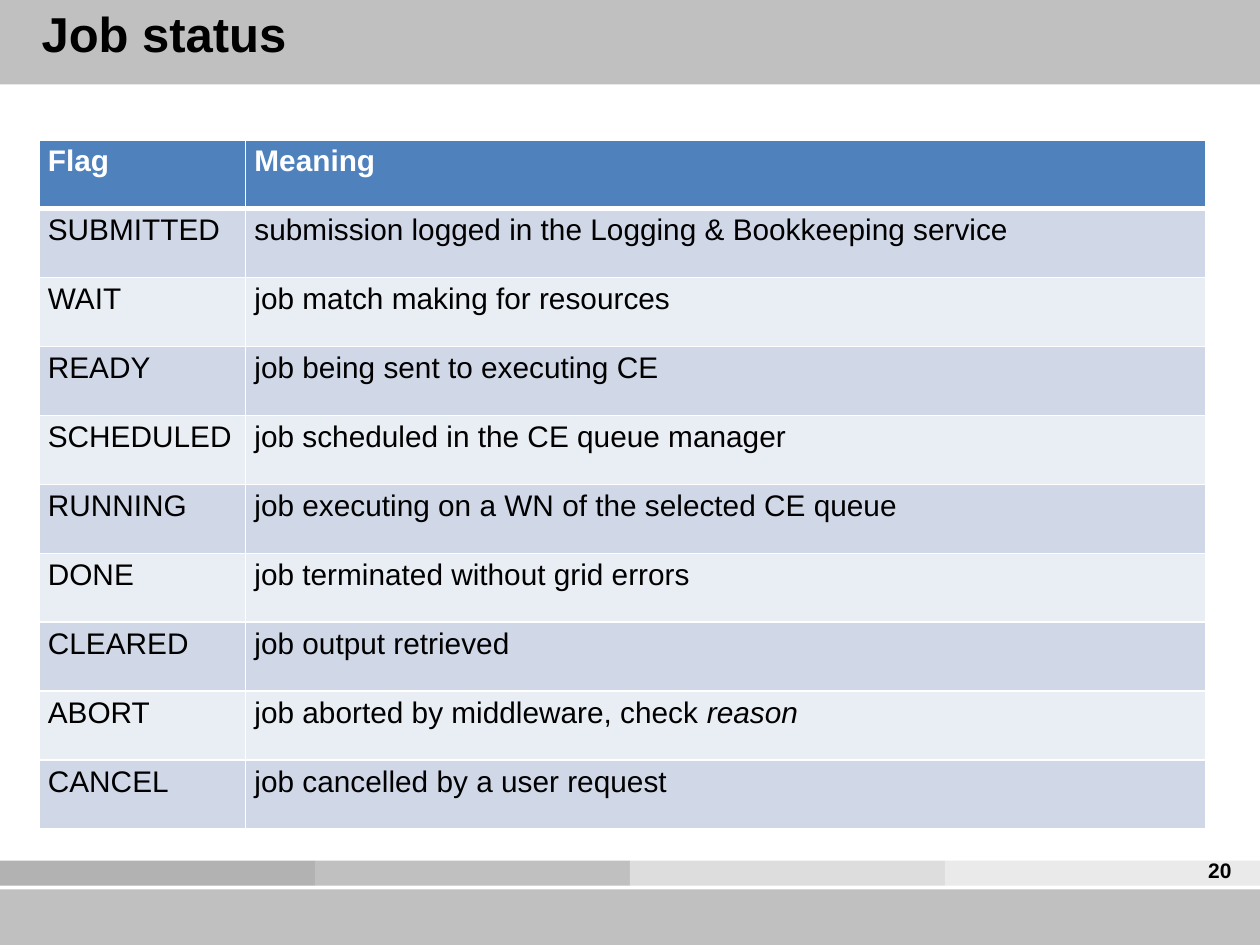
from lxml import etree
from pptx import Presentation, util as u
from pptx.dml.color import RGBColor
from pptx.enum import shapes, text
from pptx.oxml.ns import qn

COLORS = {
    "band": "C0C0C0", "white": "FFFFFF", "black": "000000",
    "header": "4F81BD", "odd": "D0D8E8", "even": "E9EDF4",
}
STRIPES = ["B2B2B2", "C0C0C0", "DDDDDD", "EAEAEA"]
STATUSES = [
    ("Flag", "Meaning"),
    ("SUBMITTED", "submission logged in the Logging & Bookkeeping service"),
    ("WAIT", "job match making for resources"),
    ("READY", "job being sent to executing CE"),
    ("SCHEDULED", "job scheduled in the CE queue manager"),
    ("RUNNING", "job executing on a WN of the selected CE queue"),
    ("DONE", "job terminated without grid errors"),
    ("CLEARED", "job output retrieved"),
    ("ABORT", "job aborted by middleware, check "),
    ("CANCEL", "job cancelled by a user request"),
]


def add_bar(left, top, width, height, color):
    bar = slide.shapes.add_shape(
        shapes.MSO_SHAPE.RECTANGLE, *map(u.Inches, (left, top, width, height)))
    bar.shadow.inherit = False
    bar.fill.solid()
    bar.fill.fore_color.rgb = RGBColor.from_string(color)
    bar.line.fill.background()


def format_runs(paragraph, size, color, bold):
    for run in paragraph.runs:
        run.font.name = "Arial"
        run.font.size = u.Pt(size)
        run.font.bold = bold
        run.font.color.rgb = RGBColor.from_string(color)


prs = Presentation()
prs.slide_width, prs.slide_height = u.Inches(10), u.Inches(7.5)
slide = prs.slides.add_slide(prs.slide_layouts[6])

# Header band, footer band and the four footer stripes
add_bar(0, 0, 10, 0.67, COLORS["band"])
add_bar(0, 7.06, 10, 0.44, COLORS["band"])
for i, color in enumerate(STRIPES):
    add_bar(2.5 * i, 6.83, 2.5, 0.2, color)

# Job status table
status_table = slide.shapes.add_table(
    len(STATUSES), 2, u.Inches(0.31), u.Inches(1.11), u.Inches(9.26), u.Inches(5.47)).table
status_table.columns[0].width = u.Inches(1.64)
status_table.columns[1].width = u.Inches(7.62)

for r, status in enumerate(STATUSES):
    fill = COLORS["header"] if r == 0 else COLORS["odd" if r % 2 else "even"]
    ink = COLORS["white" if r == 0 else "black"]
    for c, label in enumerate(status):
        cell = status_table.cell(r, c)
        cell.margin_left = cell.margin_right = u.Inches(0.07)
        cell.margin_top = cell.margin_bottom = u.Inches(0.04)
        entry = cell.text_frame.paragraphs[0]
        entry.text = label
        if status[0] == "ABORT" and c == 1:
            reason = entry.add_run()
            reason.text = "reason"
            reason.font.italic = True
        entry.alignment = text.PP_ALIGN.LEFT
        format_runs(entry, 17, ink, r == 0)

        # White cell borders, thicker under the header row
        tc_pr = cell._tc.get_or_add_tcPr()
        for side in "LRTB":
            thick = (r, side) in ((0, "B"), (1, "T"))
            border = etree.SubElement(
                tc_pr, qn(f"a:ln{side}"), w=str(u.Pt(3 if thick else 1)))
            border_fill = etree.SubElement(border, qn("a:solidFill"))
            etree.SubElement(border_fill, qn("a:srgbClr"), val=COLORS["white"])
        cell.fill.solid()
        cell.fill.fore_color.rgb = RGBColor.from_string(fill)

# Page number
page_number = slide.shapes.add_textbox(
    u.Inches(9.49), u.Inches(6.76), u.Inches(0.55), u.Inches(0.28)).text_frame
page_number.word_wrap = True
page_number.text = "20"
format_runs(page_number.paragraphs[0], 12, COLORS["black"], True)

# Title
title = slide.shapes.add_textbox(
    u.Inches(0.33), 0, u.Inches(4.39), u.Inches(0.53)).text_frame
title.word_wrap = True
title.margin_left = title.margin_right = title.margin_top = title.margin_bottom = 0
title.vertical_anchor = text.MSO_ANCHOR.MIDDLE
title.text = "Job status"
format_runs(title.paragraphs[0], 28, COLORS["black"], True)

prs.save("out.pptx")
